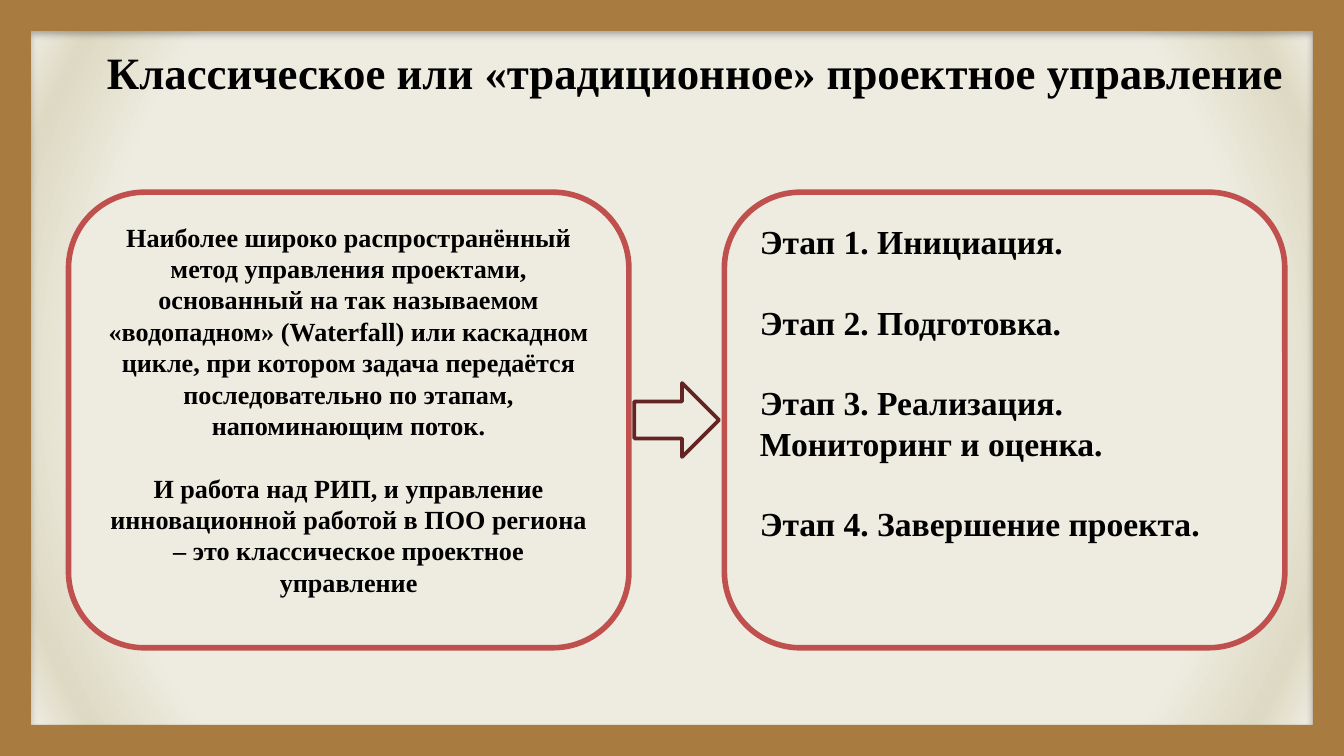
from pptx import Presentation
from pptx.dml.color import RGBColor
from pptx.enum.shapes import MSO_SHAPE
from pptx.enum.text import MSO_ANCHOR, PP_ALIGN
from pptx.oxml import parse_xml
from pptx.oxml.ns import nsdecls
from pptx.util import Inches, Pt

TITLE = "Классическое или «традиционное» проектное управление"
DEFINITION = [
    "Наиболее широко распространённый метод управления проектами, основанный "
    "на так называемом «водопадном» (Waterfall) или каскадном цикле, при котором "
    "задача передаётся последовательно по этапам, напоминающим поток.",
    "И работа над РИП, и управление инновационной работой в ПОО региона – это "
    "классическое проектное управление",
]
STAGES = [
    "Этап 1. Инициация.",
    "Этап 2. Подготовка.",
    "Этап 3. Реализация. Мониторинг и оценка.",
    "Этап 4. Завершение проекта.",
]
COLORS = {"frame": "A87B40", "panel": "EEECE1", "border": "C0504D",
          "arrow": "632523", "text": "000000", "halo": "DDD9C3", "edge": "FFFFFF"}
BACKGROUND_STOPS = [(75, "panel"), (88, "halo"), (100, "edge")]

WIDTH = 10
HEIGHT = WIDTH * 9 / 16
PANEL_TOP, PANEL_WIDTH, PANEL_HEIGHT = 1.43, 4.17, 3.39
DEFINITION_LEFT, STAGES_LEFT = 0.51, 5.39
ARROW_WIDTH, ARROW_HEIGHT = 0.63, 0.55
LINE_HEIGHT = 1.2


def color(key):
    return RGBColor.from_string(COLORS[key])


def write(text_frame, paragraphs, size, align):
    """Fill the frame with bold paragraphs set one line apart."""
    font_format = {"name": "Times New Roman", "size": Pt(size), "bold": True}
    text_frame.word_wrap = True
    for index, content in enumerate(paragraphs):
        paragraph = text_frame.add_paragraph() if index else text_frame.paragraphs[0]
        paragraph.alignment = align
        if index:
            paragraph.space_before = Pt(size * LINE_HEIGHT)
        run = paragraph.add_run()
        run.text = content
        for attribute, value in font_format.items():
            setattr(run.font, attribute, value)
        run.font.color.rgb = color("text")


def add_outline(slide, kind, box, fill=None, line=None, line_width=0):
    shape = slide.shapes.add_shape(kind, *map(Inches, box))
    shape.shadow.inherit = False
    if fill:
        shape.fill.solid()
        shape.fill.fore_color.rgb = color(fill)
    else:
        shape.fill.background()
    if line:
        shape.line.color.rgb = color(line)
        shape.line.width = Pt(line_width)
    else:
        shape.line.fill.background()
    return shape


def add_panel(slide, left, paragraphs, size, align):
    box = (left, PANEL_TOP, PANEL_WIDTH, PANEL_HEIGHT)
    panel = add_outline(slide, MSO_SHAPE.ROUNDED_RECTANGLE, box, "panel", "border", 3)
    panel.text_frame.vertical_anchor = MSO_ANCHOR.TOP
    write(panel.text_frame, paragraphs, size, align)


def set_radial_background(slide):
    slide.background.fill.solid()
    properties = slide.background.fill._xPr
    stops = "".join(
        f'<a:gs pos="{position * 1000}"><a:srgbClr val="{COLORS[key]}"/></a:gs>'
        for position, key in BACKGROUND_STOPS)
    gradient = parse_xml(
        f'<a:gradFill {nsdecls("a")} rotWithShape="1"><a:gsLst>{stops}</a:gsLst>'
        '<a:path path="circle"><a:fillToRect l="50000" t="50000" r="50000" b="50000"/>'
        '</a:path></a:gradFill>')
    properties.replace(properties[0], gradient)


def add_frame(slide):
    frame = add_outline(slide, MSO_SHAPE.FRAME, (0, 0, WIDTH, HEIGHT), "frame")
    frame.adjustments[0] = 0.041
    effects = frame._element.spPr.find("{*}effectLst")
    effects.append(parse_xml(
        f'<a:outerShdw {nsdecls("a")} blurRad="{Pt(3.5)}" dist="{Pt(2.2)}" dir="5400000">'
        '<a:srgbClr val="000000"><a:alpha val="32000"/></a:srgbClr></a:outerShdw>'))
    slide.shapes._spTree.insert(2, frame._element)


def place_title(slide):
    title = slide.shapes.title
    place = {"left": 0.67, "top": 0.06, "width": 9, "height": 0.94}
    for attribute, value in place.items():
        setattr(title, attribute, Inches(value))
    title.text_frame.vertical_anchor = MSO_ANCHOR.MIDDLE
    write(title.text_frame, [TITLE], 24, PP_ALIGN.CENTER)


def main():
    presentation = Presentation()
    presentation.slide_width = Inches(WIDTH)
    presentation.slide_height = Inches(HEIGHT)
    slide = presentation.slides.add_slide(presentation.slide_layouts[5])

    set_radial_background(slide)
    add_frame(slide)
    place_title(slide)
    add_panel(slide, STAGES_LEFT, STAGES, 18, PP_ALIGN.LEFT)
    add_panel(slide, DEFINITION_LEFT, DEFINITION, 14, PP_ALIGN.CENTER)

    gap_center = (DEFINITION_LEFT + PANEL_WIDTH + STAGES_LEFT) / 2
    panel_middle = PANEL_TOP + PANEL_HEIGHT / 2
    arrow_box = (gap_center - ARROW_WIDTH / 2, panel_middle - ARROW_HEIGHT / 2,
                 ARROW_WIDTH, ARROW_HEIGHT)
    add_outline(slide, MSO_SHAPE.RIGHT_ARROW, arrow_box, line="arrow", line_width=2)

    presentation.save("out.pptx")


if __name__ == "__main__":
    main()
